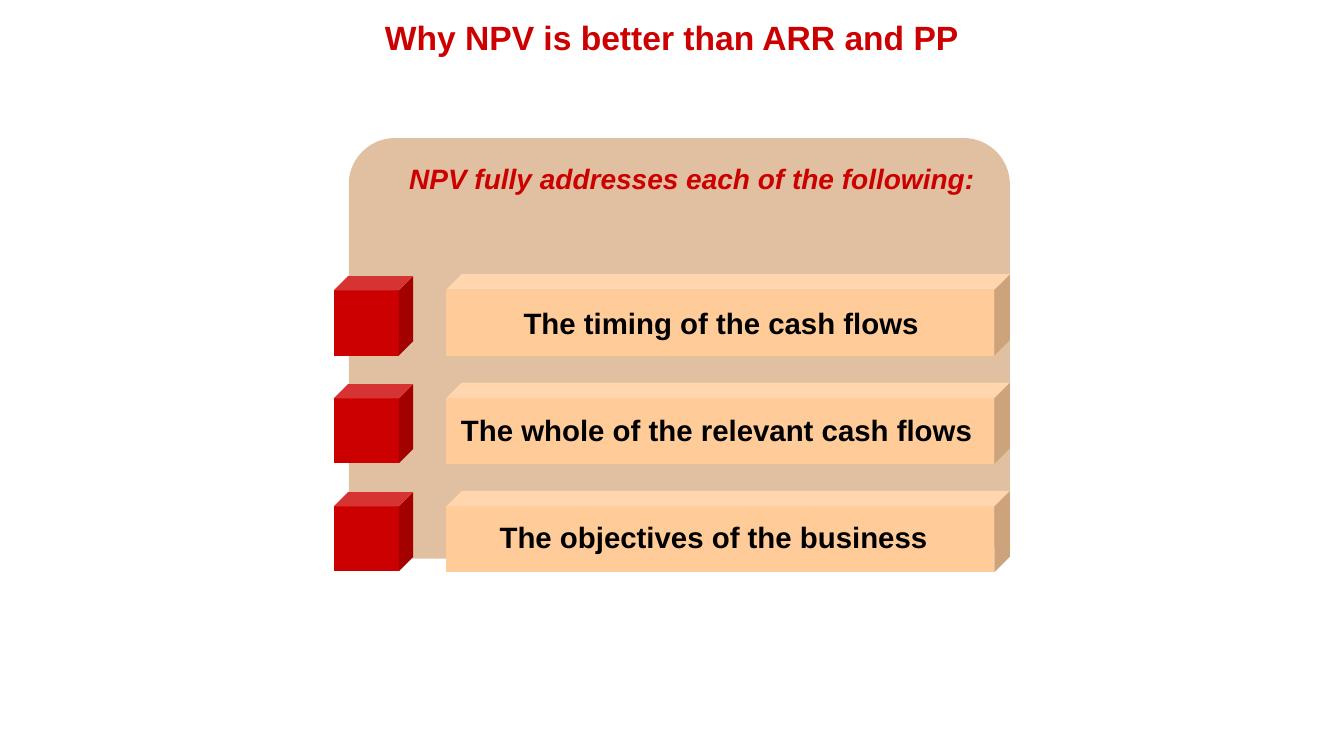
import pptx
import pptx.util
import pptx.dml.color
import pptx.enum.shapes
import pptx.enum.text
from dataclasses import dataclass

Cm = pptx.util.Cm
SHAPE = pptx.enum.shapes.MSO_SHAPE


@dataclass
class Theme:
    font: str = "Arial"
    red: str = "CC0000"
    black: str = "000000"
    panel: str = "E0C0A0"
    bar: str = "FFCC99"
    title: int = 24
    item: int = 21
    lead: int = 20


class Page:
    def __init__(self, deck, theme):
        self.theme = theme
        self.slide = deck.slides.add_slide(deck.slide_layouts[5])

    def letter(self, frame, text, size, color, italic=False):
        """Fill a text frame with one bold, centred line."""
        frame.word_wrap = True
        frame.auto_size = pptx.enum.text.MSO_AUTO_SIZE.NONE
        frame.vertical_anchor = pptx.enum.text.MSO_ANCHOR.MIDDLE
        frame.margin_left = frame.margin_right = Cm(0.25)
        frame.margin_top = frame.margin_bottom = Cm(0.13)
        line = frame.paragraphs[0]
        line.text = text
        line.alignment = pptx.enum.text.PP_ALIGN.CENTER
        font = line.font
        font.name, font.size = self.theme.font, pptx.util.Pt(size)
        font.bold, font.italic = True, italic
        font.color.rgb = pptx.dml.color.RGBColor.from_string(color)

    def title(self, text, left, top, width, height):
        head = self.slide.shapes.title
        head.left, head.top = Cm(left), Cm(top)
        head.width, head.height = Cm(width), Cm(height)
        self.letter(head.text_frame, text, self.theme.title, self.theme.red)

    def label(self, text, left, top, width, height, size, color, italic=False):
        box = self.slide.shapes.add_textbox(Cm(left), Cm(top), Cm(width), Cm(height))
        self.letter(box.text_frame, text, size, color, italic)

    def block(self, kind, left, top, width, height, color, bend):
        """Add a plain filled shape; bend is its corner or depth ratio."""
        shape = self.slide.shapes.add_shape(kind, Cm(left), Cm(top), Cm(width), Cm(height))
        shape.adjustments[0] = bend
        shape.shadow.inherit = False
        shape.fill.solid()
        shape.fill.fore_color.rgb = pptx.dml.color.RGBColor.from_string(color)
        shape.line.fill.background()


def main():
    deck = pptx.Presentation()
    deck.slide_width, deck.slide_height = Cm(33.87), Cm(19.05)
    theme = Theme()
    page = Page(deck, theme)
    page.title("Why NPV is better than ARR and PP", 5.18, 0.3, 23.5, 1.27)
    page.block(SHAPE.ROUNDED_RECTANGLE, 8.79, 3.48, 16.66, 10.6, theme.panel, 0.11)
    page.label("NPV fully addresses each of the following:", 9.91, 3.94, 15.06, 1.09,
               theme.lead, theme.red, italic=True)

    # text, left and width of each label
    items = [
        ("The timing of the cash flows", 11.33, 13.69),
        ("The whole of the relevant cash flows", 11, 14.12),
        ("The objectives of the business", 11.15, 13.67),
    ]
    for row, (text, left, width) in enumerate(items):
        page.block(SHAPE.CUBE, 11.25, 6.91 + 2.73 * row, 14.2, 2.05, theme.bar, 0.19)
        page.block(SHAPE.CUBE, 8.41, 6.96 + 2.72 * row, 2, 2, theme.red, 0.18)
        page.label(text, left, 7.57 + 2.69 * row, width, 1.14, theme.item, theme.black)
    deck.save("out.pptx")


if __name__ == "__main__":
    main()
